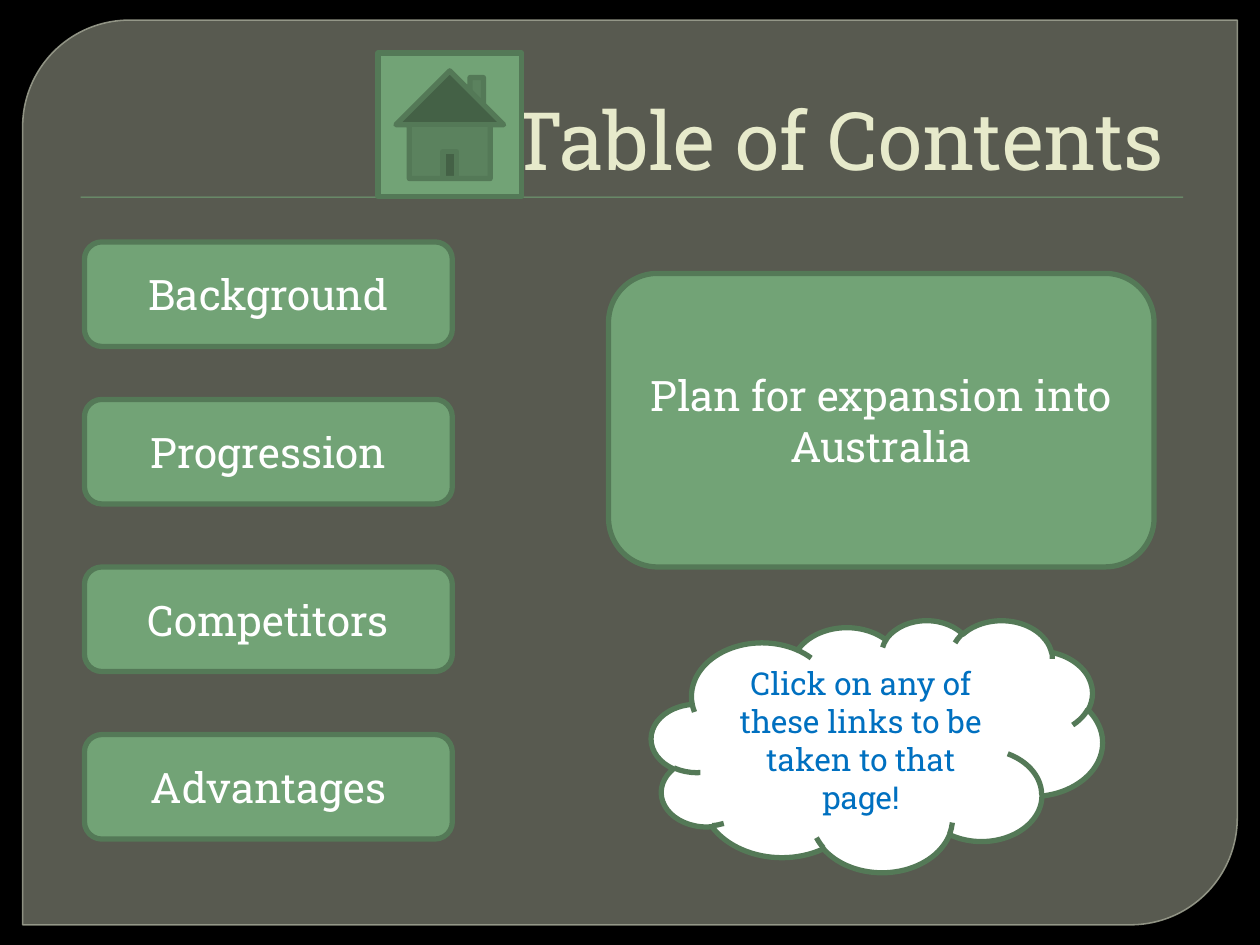
from lxml import etree
from pptx import Presentation
from pptx.dml.color import RGBColor
from pptx.enum import shapes, text
from pptx.oxml.ns import qn
from pptx.util import Inches, Pt

THEME = {
    "font": "Roboto Slab",
    "black": "000000",
    "panel": "888B7B",
    "panel_line": "9DA090",
    "green": "72A376",
    "dark_green": "547957",
    "cream": "E7EACB",
    "white": "FFFFFF",
    "blue": "0070C0",
    "title_size": 46,
    "link_size": 24,
    "hint_size": 18,
}
KIND = shapes.MSO_SHAPE

TITLE = "Table of Contents"
LINKS = [
    ("Background", 1.92),
    ("Progression", 3.17),
    ("Competitors", 4.5),
    ("Advantages", 5.83),
]
LINK_LEFT, LINK_WIDTH, LINK_HEIGHT = 0.67, 2.92, 0.83
PLAN = ("Plan for expansion into Australia", (4.83, 2.17, 4.33, 2.33))
HINT = ("Click on any of these links to be taken to that page!", (5.17, 4.92, 3.58, 2))


def color(name):
    return RGBColor.from_string(THEME[name])


def set_alpha(fill_owner, percent):
    for clr in fill_owner.iter(qn("a:srgbClr")):
        etree.SubElement(clr, qn("a:alpha")).set("val", str(percent * 1000))


def add_shape(s, kind, box, fill="green", line="dark_green", width=3):
    sp = s.shapes.add_shape(kind, *map(Inches, box))
    sp.shadow.inherit = False
    sp.fill.solid()
    sp.fill.fore_color.rgb = color(fill)
    if line:
        sp.line.color.rgb = color(line)
        sp.line.width = Pt(width)
    else:
        sp.line.fill.background()
    return sp


def write(sp, content, size="link_size", fill="white",
          align=text.PP_ALIGN.CENTER, anchor=text.MSO_ANCHOR.MIDDLE):
    tf = sp.text_frame
    tf.word_wrap = True
    tf.vertical_anchor = anchor
    p = tf.paragraphs[0]
    p.alignment = align
    r = p.add_run()
    r.text = content
    r.font.name = THEME["font"]
    r.font.size = Pt(THEME[size])
    r.font.color.rgb = color(fill)


def add_background(s):
    s.background.fill.solid()
    s.background.fill.fore_color.rgb = color("black")
    panel = add_shape(s, KIND.ROUND_2_DIAG_RECTANGLE, (0.18, 0.16, 9.64, 7.18),
                      "panel", "panel_line", 0.87)
    panel.adjustments[0] = 0.118
    panel.adjustments[1] = 0
    props = panel.fill._xPr
    set_alpha(props.find(qn("a:solidFill")), 65)
    set_alpha(props.find(qn("a:ln")), 88)
    add_shape(s, KIND.RECTANGLE, (0.64, 1.56, 8.75, 0.01), line=None)


def main():
    prs = Presentation()
    prs.slide_width, prs.slide_height = Inches(10), Inches(7.5)
    s = prs.slides.add_slide(prs.slide_layouts[6])
    add_background(s)

    title = s.shapes.add_textbox(*map(Inches, (0.5, 0.28, 9, 1.25)))
    title.text_frame.margin_right = Inches(0.26)
    write(title, TITLE, size="title_size", fill="cream",
          align=text.PP_ALIGN.RIGHT, anchor=text.MSO_ANCHOR.BOTTOM)
    add_shape(s, KIND.ACTION_BUTTON_HOME, (3, 0.42, 1.14, 1.14))

    buttons = [(label, (LINK_LEFT, top, LINK_WIDTH, LINK_HEIGHT)) for label, top in LINKS]
    for label, box in buttons + [PLAN]:
        write(add_shape(s, KIND.ROUNDED_RECTANGLE, box), label)

    label, box = HINT
    write(add_shape(s, KIND.CLOUD, box, fill="white"), label, size="hint_size", fill="blue")

    prs.save("out.pptx")


if __name__ == "__main__":
    main()
